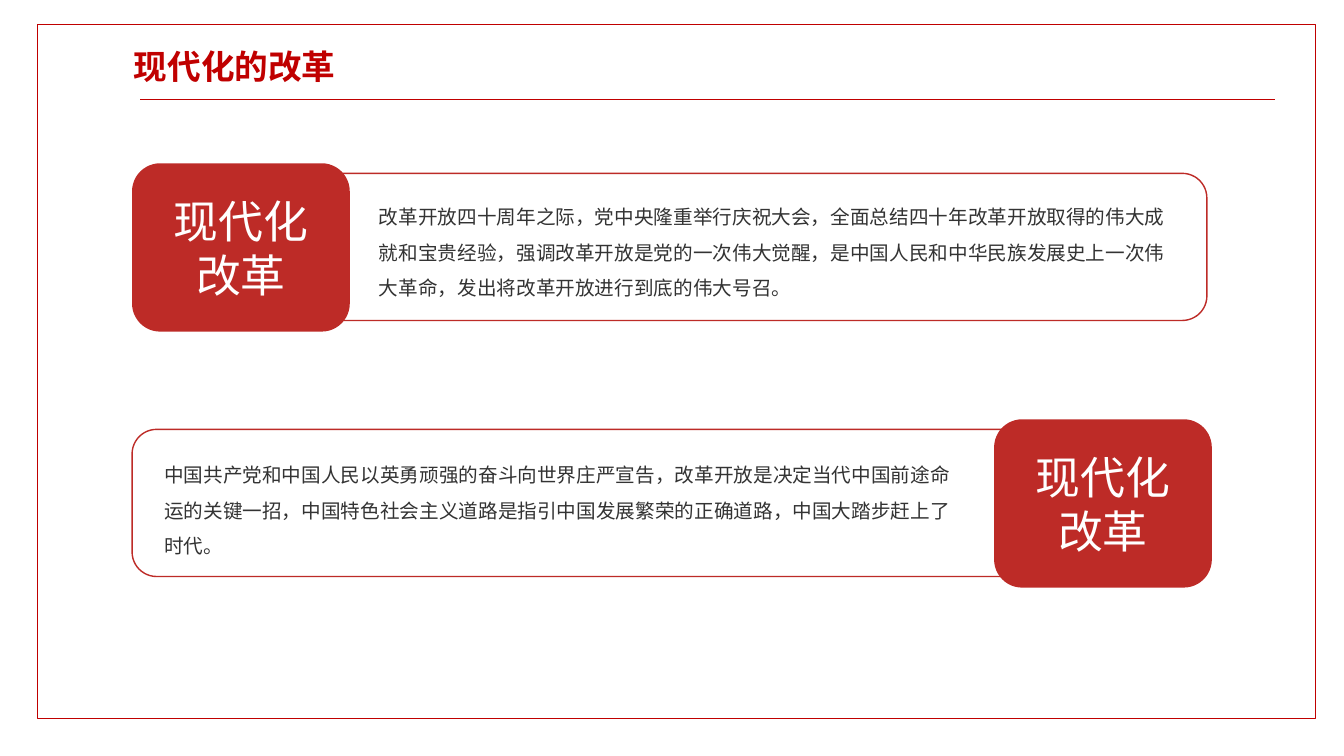
from pptx import Presentation
from pptx.dml.color import RGBColor
from pptx.enum import shapes, text
from pptx.oxml import parse_xml
from pptx.oxml.ns import nsdecls, qn
from pptx.util import Inches, Pt

FONT = "Noto Sans CJK SC"
RED, BRICK, WHITE, GREY = "C00000", "BD2B27", "FFFFFF", "333333"


def color(value):
    return RGBColor.from_string(value)


def write(box, wording, size, shade, align, bold=False, spacing=None):
    frame = box.text_frame
    frame.word_wrap = True
    para = frame.paragraphs[0]
    para.alignment = align
    para.line_spacing = spacing
    span = para.add_run()
    span.text = wording
    span.font.size = Pt(size)
    span.font.bold = bold
    span.font.color.rgb = color(shade)
    span.font.name = FONT
    span.font._element.append(parse_xml(f'<a:ea {nsdecls("a")} typeface="{FONT}"/>'))


deck = Presentation()
deck.slide_width, deck.slide_height = Inches(13.33), Inches(7.5)
page = deck.slides.add_slide(deck.slide_layouts[6])

# Page border
border = page.shapes.add_shape(
    shapes.MSO_SHAPE.RECTANGLE, Inches(0.37), Inches(0.24), Inches(12.68), Inches(6.89))
border.shadow.inherit = False
border.fill.solid()
border.fill.fore_color.rgb = color(WHITE)
border.line.color.rgb = color(RED)
border.line.width = Pt(1)

# Title and rule
title = page.shapes.add_textbox(Inches(1.23), Inches(0.41), Inches(2.52), Inches(0.5))
write(title, "现代化的改革", 24, RED, text.PP_ALIGN.JUSTIFY, bold=True)
rule = page.shapes.add_connector(
    shapes.MSO_CONNECTOR.STRAIGHT, Inches(1.39), Inches(0.99), Inches(12.65), Inches(0.99))
rule.line.color.rgb = color(RED)
rule.line.width = Pt(0.5)
rule._element.find(qn("p:spPr")).append(parse_xml(f'<a:effectLst {nsdecls("a")}/>'))

# Banners: panel left, tile left, body left, tile top, body top, wording
banners = [
    (1.68, 1.31, 3.66, 1.62, 1.87,
     "改革开放四十周年之际，党中央隆重举行庆祝大会，全面总结四十年改革开放取得的伟大成就和宝贵经验，"
     "强调改革开放是党的一次伟大觉醒，是中国人民和中华民族发展史上一次伟大革命，"
     "发出将改革开放进行到底的伟大号召。"),
    (1.31, 9.86, 1.53, 4.16, 4.43,
     "中国共产党和中国人民以英勇顽强的奋斗向世界庄严宣告，改革开放是决定当代中国前途命运的关键一招，"
     "中国特色社会主义道路是指引中国发展繁荣的正确道路，中国大踏步赶上了时代。"),
]
for panel_left, tile_left, body_left, tile_top, body_top, wording in banners:
    # Outlined panel
    panel = page.shapes.add_shape(
        shapes.MSO_SHAPE.ROUNDED_RECTANGLE, Inches(panel_left), Inches(tile_top + 0.1),
        Inches(10.29), Inches(1.46))
    panel.shadow.inherit = False
    panel.fill.background()
    panel.line.color.rgb = color(BRICK)
    panel.line.width = Pt(1)

    # Filled tile with its label
    tile = page.shapes.add_shape(
        shapes.MSO_SHAPE.ROUNDED_RECTANGLE, Inches(tile_left), Inches(tile_top),
        Inches(2.16), Inches(1.67))
    tile.shadow.inherit = False
    tile.fill.solid()
    tile.fill.fore_color.rgb = color(BRICK)
    tile.line.fill.background()
    tile.text_frame.margin_left = tile.text_frame.margin_right = Inches(0.25)
    tile.text_frame.vertical_anchor = text.MSO_ANCHOR.MIDDLE
    write(tile, "现代化改革", 32, WHITE, text.PP_ALIGN.CENTER)

    # Body text
    body = page.shapes.add_textbox(
        Inches(body_left), Inches(body_top), Inches(8.15), Inches(1.12))
    write(body, wording, 14, GREY, text.PP_ALIGN.LEFT, spacing=1.5)

deck.save("out.pptx")
